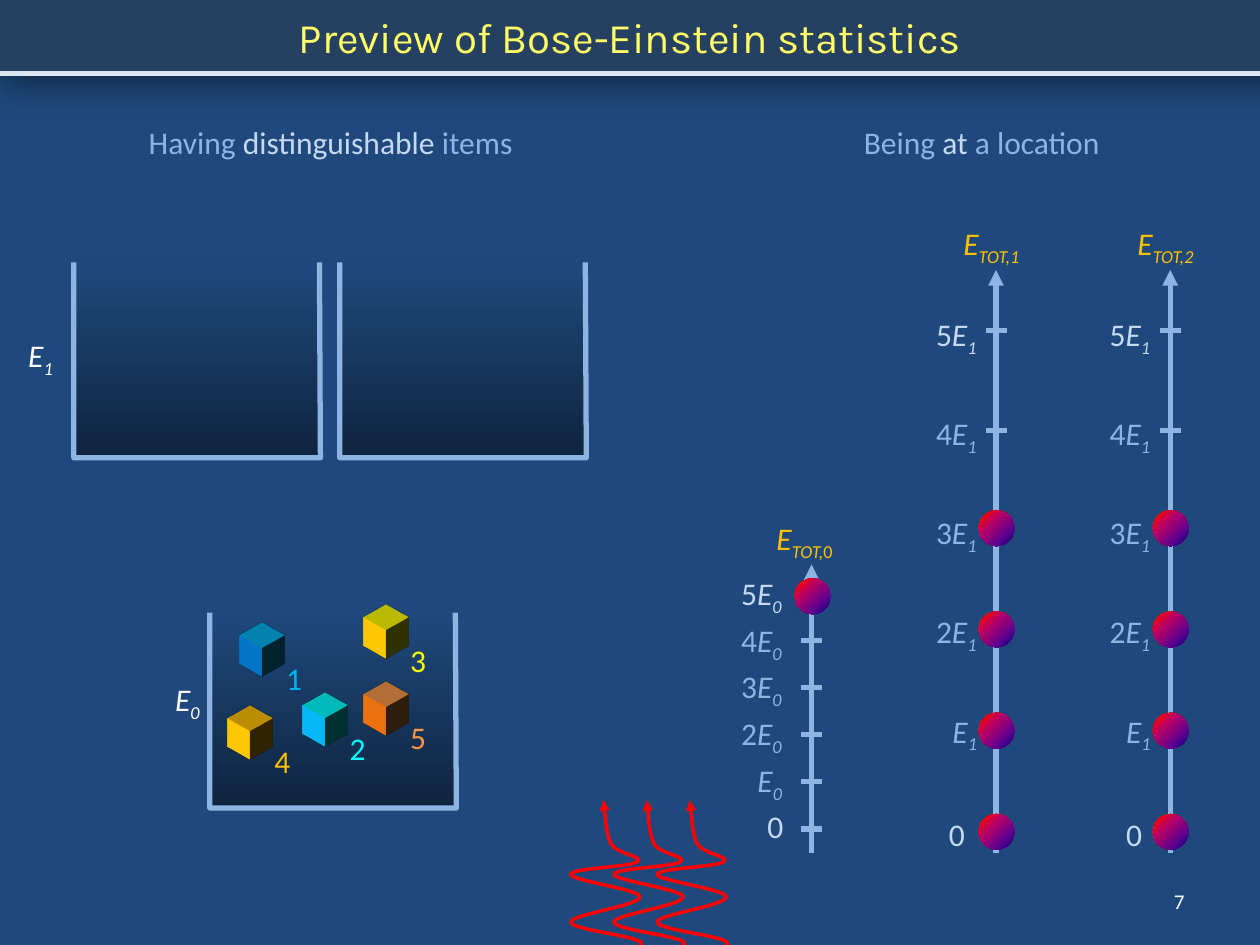
from dataclasses import dataclass

from pptx import Presentation
from pptx.dml.color import RGBColor as Rgb
from pptx.enum.shapes import MSO_CONNECTOR as Connector, MSO_SHAPE as Preset
from pptx.enum.text import MSO_ANCHOR as Anchor, MSO_AUTO_SIZE as AutoSize, PP_ALIGN as Align
from pptx.oxml import parse_xml
from pptx.oxml.ns import nsdecls, qn
from pptx.util import Cm, Pt


@dataclass(frozen=True)
class Theme:
    back: str = "1F497D"
    banner: str = "254061"
    rule: str = "DCE6F2"
    title: str = "FFFF66"
    axis: str = "8EB4E3"
    pale: str = "C6D9F1"
    gold: str = "FFC000"
    white: str = "FFFFFF"
    wave: str = "FF0000"
    deep: str = "0F243E"
    cubes: tuple = (("0070C0", "00B0F0"), ("00B0F0", "00FFFF"), ("FFC000", "FFFF00"),
                    ("FFC000", "FFC000"), ("E46C0A", "F79646"))
    sphere: tuple = ((0, "000082"), (30, "66008F"), (65, "BA0066"), (90, "FF0000"), (100, "FF8200"))
    title_font: str = "Karla"
    font: str = "Calibri"
    title_size: int = 24
    size: int = 18
    small: int = 12


theme = Theme()
deck = Presentation()
deck.slide_width, deck.slide_height = Cm(25.4), Cm(19.05)
page = deck.slides.add_slide(deck.slide_layouts[5])
page.background.fill.solid()
page.background.fill.fore_color.rgb = Rgb.from_string(theme.back)


def add_label(left, top, width, spans, align=Align.LEFT, wrap=False, size=theme.size):
    box = page.shapes.add_textbox(Cm(left), Cm(top), Cm(width), Cm(1.02))
    frame = box.text_frame
    frame.word_wrap = wrap
    frame.auto_size = AutoSize.SHAPE_TO_FIT_TEXT
    para = frame.paragraphs[0]
    para.alignment = align
    for text, color, style in spans:
        span = para.add_run()
        span.text = text
        span.font.name = theme.font
        span.font.size = Pt(size)
        span.font.italic = "italic" in style
        span.font.color.rgb = Rgb.from_string(color)
        if "sub" in style:
            span.font._element.set("baseline", "-25000")
    return frame


def add_outline(points, color, width):
    corners = [(Cm(x), Cm(y)) for x, y in points]
    builder = page.shapes.build_freeform(*corners[0], scale=1.0)
    builder.add_line_segments(corners[1:], close=False)
    shape = builder.convert_to_shape()
    shape.shadow.inherit = False
    shape.line.width = Pt(width)
    shape.line.color.rgb = Rgb.from_string(color)
    return shape


title = page.shapes.title
title.left, title.top, title.width, title.height = Cm(0), Cm(0), Cm(25.4), Cm(1.47)
title.fill.solid()
title.fill.fore_color.rgb = Rgb.from_string(theme.banner)
title.text_frame.text = "Preview of Bose-Einstein statistics"
title.text_frame.vertical_anchor = Anchor.MIDDLE
title.text_frame.paragraphs[0].alignment = Align.CENTER
title_font = title.text_frame.paragraphs[0].runs[0].font
title_font.name = theme.title_font
title_font.size = Pt(theme.title_size)
title_font.color.rgb = Rgb.from_string(theme.title)
title.element.spPr.append(parse_xml(
    f'<a:effectLst {nsdecls("a")}><a:outerShdw blurRad="{Pt(20)}" dist="{Pt(5)}" dir="5400000" '
    'sx="108000" sy="100000" algn="t" rotWithShape="0"><a:srgbClr val="000000">'
    '<a:alpha val="50000"/></a:srgbClr></a:outerShdw></a:effectLst>'))

border = page.shapes.add_shape(Preset.RECTANGLE, Cm(-0.43), Cm(1.48), Cm(26.24), Cm(18.21))
border.shadow.inherit = False
border.fill.background()
border.line.width = Pt(3)
border.line.color.rgb = Rgb.from_string(theme.rule)

axes = [
    dict(x=16.36, top=11.38, tick=16.71, step=0.95, right=16.06, zero=(16.06, 16.15),
         label=16.15, rise=0.94, level="0", head=(14.57, 10.34, 3.3)),
    dict(x=20.08, top=5.44, tick=16.76, step=2.02, right=19.99, zero=(19.72, 16.31),
         label=16.22, rise=2.0, level="1", head=(18.6, 4.39, 2.77)),
    dict(x=23.59, top=5.44, tick=16.76, step=2.02, right=23.49, zero=(23.29, 16.31),
         label=16.22, rise=2.0, level="1", head=(22.11, 4.39, 2.77)),
]
lines = []
for axis in axes:
    lines.append((axis["x"], 17.2, axis["x"], axis["top"], True))
    for n in range(6):
        y = axis["tick"] - n * axis["step"]
        lines.append((axis["x"] - 0.21, y, axis["x"] + 0.21, y, False))

for x1, y1, x2, y2, arrow in lines:
    line = page.shapes.add_connector(Connector.STRAIGHT, Cm(x1), Cm(y1), Cm(x2), Cm(y2))
    line.line.width = Pt(3)
    line.line.color.rgb = Rgb.from_string(theme.axis)
    if arrow:
        line.line._get_or_add_ln().append(parse_xml(f'<a:tailEnd {nsdecls("a")} type="triangle"/>'))
    line._element.spPr.append(parse_xml(f'<a:effectLst {nsdecls("a")}/>'))

heads = [[("TOT,", theme.gold, "italic sub"), ("0", theme.gold, "sub")],
         [("TOT,1", theme.gold, "italic sub")], [("TOT,2", theme.gold, "italic sub")]]
for axis, head in zip(axes, heads):
    zero_right, zero_top = axis["zero"]
    add_label(zero_right - 0.84, zero_top, 0.84, [("0", theme.pale, "")])
    for n in range(1, 6):
        color = theme.pale if n == 5 else theme.axis
        spans = [("E", color, "italic"), (axis["level"], color, "italic sub")]
        width = 1.04
        if n > 1:
            spans.insert(0, (str(n), color, ""))
            width = 1.37
        add_label(axis["right"] - width, axis["label"] - n * axis["rise"], width, spans)
    add_label(*axis["head"], [("E", theme.gold, "italic"), *head], Align.CENTER, True)

for left, top in [(4.23, 12.35), (6.85, 5.29), (1.49, 5.29)]:
    bin_shape = add_outline([(left, top), (left, top + 3.94), (left + 4.97, top + 3.94),
                             (left + 4.95, top)], theme.axis, 3)
    bin_shape.fill.gradient()
    bin_shape.fill.gradient_angle = 90
    for stop, color in zip(bin_shape.fill.gradient_stops, (theme.deep, theme.back)):
        stop.color.rgb = Rgb.from_string(color)

for left, top, level in [(3.28, 13.59, "0"), (0.32, 6.65, "1")]:
    add_label(left, top, 1.04, [("E", theme.white, "italic"), (level, theme.white, "italic sub")])
number_frame = add_label(18.21, 17.65, 5.92, [("7", theme.white, "")], Align.RIGHT, True, theme.small)
number_frame.auto_size = AutoSize.NONE
number_frame.vertical_anchor = Anchor.MIDDLE
add_label(13.34, 2.36, 12.9, [("Being ", theme.axis, ""), ("at ", theme.pale, ""),
                              ("a location", theme.axis, "")], Align.CENTER, True)
add_label(1.98, 2.36, 9.37, [("Having ", theme.axis, ""), ("distinguishable ", theme.pale, ""),
                             ("items", theme.axis, "")], Align.CENTER, True)

wave_points = [
    (12.14, 20.75),
    (11.76, 20.68), (11.4, 20.6), (11.53, 20.47),
    (11.66, 20.35), (12.9, 20.17), (12.9, 20.02),
    (12.9, 19.84), (11.53, 19.69), (11.53, 19.53),
    (11.53, 19.38), (12.93, 19.18), (12.93, 19.02),
    (12.93, 18.87), (11.51, 18.75), (11.51, 18.59),
    (11.48, 18.44), (12.9, 18.26), (12.9, 18.08),
    (12.9, 17.93), (11.51, 17.75), (11.51, 17.63),
    (11.48, 17.5), (12.73, 17.48), (12.85, 17.37),
    (13, 17.27), (12.45, 17.22), (12.32, 17.02),
    (12.22, 16.81), (12.17, 16.13), (12.17, 16.13),
]
for n in range(3):
    wave = add_outline([(x + 0.87 * n, y) for x, y in wave_points], theme.wave, 2)
    wave.fill.background()
    wave.line._get_or_add_ln().append(parse_xml(f'<a:tailEnd {nsdecls("a")} type="triangle"/>'))
    segments = list(wave.element.iter(qn("a:lnTo")))
    for start in range(0, len(segments), 3):
        curve = parse_xml(f'<a:cubicBezTo {nsdecls("a")}/>')
        segments[start].addprevious(curve)
        for segment in segments[start:start + 3]:
            curve.append(segment[0])
            segment.getparent().remove(segment)

cube_places = [(4.73, 12.88), (6.01, 14.29), (7.23, 12.51), (4.49, 14.55), (7.23, 14.06)]
for number, ((left, top), (front, side)) in enumerate(zip(cube_places, theme.cubes), 1):
    cube = page.shapes.add_shape(Preset.RECTANGLE, Cm(left), Cm(top), Cm(0.64), Cm(0.7))
    cube.shadow.inherit = False
    cube.fill.solid()
    cube.fill.fore_color.rgb = Rgb.from_string(front)
    cube.line.fill.background()
    cube.element.spPr.append(parse_xml(
        f'<a:scene3d {nsdecls("a")}><a:camera prst="isometricLeftDown"/>'
        '<a:lightRig rig="threePt" dir="t"/></a:scene3d>'))
    cube.element.spPr.append(parse_xml(
        f'<a:sp3d {nsdecls("a")} extrusionH="{Cm(0.64)}"><a:extrusionClr>'
        f'<a:srgbClr val="{side}"/></a:extrusionClr></a:sp3d>'))
    add_label(left + 0.79, top + 0.28, 0.84, [(str(number), side, "")])

stops = "".join(f'<a:gs pos="{pos * 1000}"><a:srgbClr val="{color}"/></a:gs>' for pos, color in theme.sphere)
spheres = [(16.02, 11.66)] + [(left, 16.41 - 2.04 * n) for left in (19.73, 23.24) for n in range(4)]
for left, top in spheres:
    sphere = page.shapes.add_shape(Preset.OVAL, Cm(left), Cm(top), Cm(0.72), Cm(0.72))
    sphere.shadow.inherit = False
    sphere.line.fill.background()
    sphere.fill.gradient()
    plain = sphere.element.spPr.find(qn("a:gradFill"))
    sphere.element.spPr.replace(plain, parse_xml(
        f'<a:gradFill {nsdecls("a")} rotWithShape="1"><a:gsLst>{stops}</a:gsLst>'
        '<a:path path="circle"><a:fillToRect l="100000" t="100000"/></a:path></a:gradFill>'))

deck.save("out.pptx")
